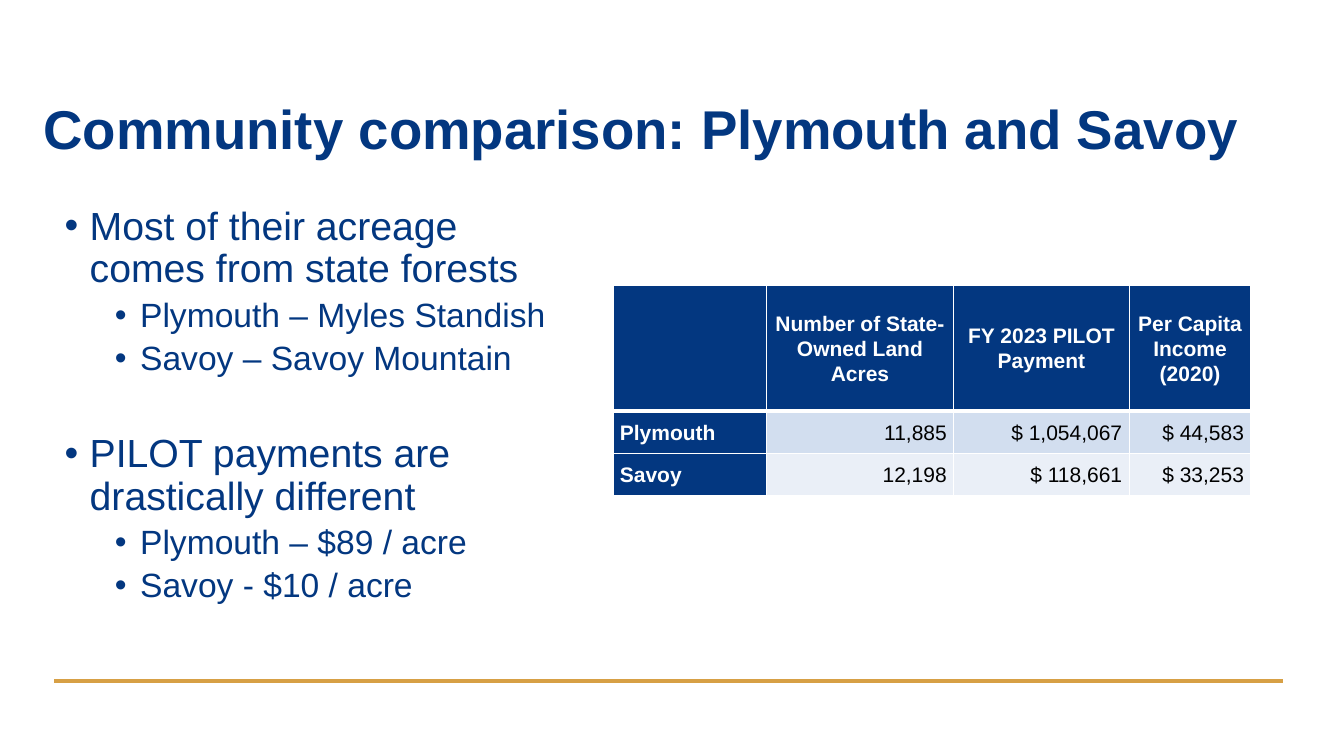
from lxml.etree import SubElement
from pptx import Presentation
from pptx.dml.color import RGBColor
from pptx.enum.shapes import MSO_CONNECTOR
from pptx.enum.text import MSO_ANCHOR, MSO_AUTO_SIZE, PP_ALIGN
from pptx.oxml.ns import qn
from pptx.util import Pt

COLORS = {
    "navy": "033780",
    "gold": "D7A045",
    "white": "FFFFFF",
    "black": "000000",
    "band_dark": "D2DEEF",
    "band_light": "EAEFF7",
}
FONT = "Arial"

BULLETS = [
    (0, "Most of their acreage comes from state forests"),
    (1, "Plymouth – Myles Standish"),
    (1, "Savoy – Savoy Mountain"),
    (0, "PILOT payments are drastically different"),
    (1, "Plymouth – $89 / acre"),
    (1, "Savoy - $10 / acre"),
]
LEVELS = [
    {"size": 28, "margin": 18, "before": 10},
    {"size": 24, "margin": 54, "before": 5},
]
GROUP_GAP = 40

ROWS = [
    ["", "Number of State-Owned Land Acres", "FY 2023 PILOT Payment",
     "Per Capita Income (2020)"],
    ["Plymouth", "11,885", "$ 1,054,067", "$ 44,583"],
    ["Savoy", "12,198", "$ 118,661", "$ 33,253"],
]
COL_WIDTHS = [109.5, 134, 125.3, 87]
ROW_HEIGHTS = [90, 30, 30]


def rgb(name):
    return RGBColor.from_string(COLORS[name])


def set_attrs(obj, values):
    for name, value in values.items():
        setattr(obj, name, value)


def place(shape, left, top, width, height):
    set_attrs(shape, {"left": Pt(left), "top": Pt(top),
                      "width": Pt(width), "height": Pt(height)})


def add_run(p, text, size, color, bold=False):
    r = p.add_run()
    r.text = text
    set_attrs(r.font, {"name": FONT, "size": Pt(size), "bold": bold})
    r.font.color.rgb = rgb(color)


def fill_title(sp):
    place(sp, 23.8, 55.4, 869.8, 77.8)
    tf = sp.text_frame
    set_attrs(tf, {"word_wrap": True, "auto_size": MSO_AUTO_SIZE.NONE,
                   "vertical_anchor": MSO_ANCHOR.MIDDLE})
    p = tf.paragraphs[0]
    set_attrs(p, {"alignment": PP_ALIGN.LEFT, "line_spacing": 0.9})
    add_run(p, "Community comparison: Plymouth and Savoy", 39, "navy", True)


def set_bullet(p, margin):
    pPr = p._p.get_or_add_pPr()
    pPr.set("marL", str(Pt(margin)))
    pPr.set("indent", str(Pt(-18)))
    SubElement(pPr, qn("a:buFont")).set("typeface", FONT)
    SubElement(pPr, qn("a:buChar")).set("char", "•")


def fill_list(sp):
    place(sp, 38.9, 144, 382.3, 342.7)
    tf = sp.text_frame
    set_attrs(tf, {"word_wrap": True, "auto_size": MSO_AUTO_SIZE.NONE,
                   "vertical_anchor": MSO_ANCHOR.TOP})
    for i, (level, text) in enumerate(BULLETS):
        p = tf.add_paragraph() if i else tf.paragraphs[0]
        fmt = LEVELS[level]
        before = GROUP_GAP if i and level == 0 else fmt["before"]
        set_attrs(p, {"level": level, "alignment": PP_ALIGN.LEFT,
                      "line_spacing": 0.9, "space_before": Pt(before),
                      "space_after": Pt(0)})
        set_bullet(p, fmt["margin"])
        add_run(p, text, fmt["size"], "navy")


def set_borders(cell, **widths):
    """Draw white borders; keys are the sides L, R, T and B in that order."""
    tcPr = cell._tc.get_or_add_tcPr()
    for side, width in widths.items():
        ln = SubElement(tcPr, qn(f"a:ln{side}"), w=str(Pt(width)))
        fill = SubElement(ln, qn("a:solidFill"))
        SubElement(fill, qn("a:srgbClr"), val=COLORS["white"])


def format_cell(cell, row, col, text):
    heading = row == 0 or col == 0
    set_borders(cell, L=1, R=1, T=3 if row == 1 else 1, B=3 if row == 0 else 1)
    cell.fill.solid()
    cell.fill.fore_color.rgb = rgb(
        "navy" if heading else "band_dark" if row % 2 else "band_light")
    set_attrs(cell, {"vertical_anchor": MSO_ANCHOR.MIDDLE,
                     "margin_left": Pt(5), "margin_right": Pt(5),
                     "margin_top": 0, "margin_bottom": 0})
    if not text:
        return
    p = cell.text_frame.paragraphs[0]
    align = (PP_ALIGN.CENTER if row == 0
             else PP_ALIGN.LEFT if col == 0 else PP_ALIGN.RIGHT)
    set_attrs(p, {"alignment": align, "line_spacing": 1.07})
    add_run(p, text, 15, "white" if heading else "black", heading)


def add_comparison_table(s):
    table = s.shapes.add_table(
        len(ROWS), len(COL_WIDTHS), Pt(437.8), Pt(203.8),
        Pt(sum(COL_WIDTHS)), Pt(sum(ROW_HEIGHTS))).table
    for column, width in zip(table.columns, COL_WIDTHS):
        column.width = Pt(width)
    for row, height in zip(table.rows, ROW_HEIGHTS):
        row.height = Pt(height)
    for r, texts in enumerate(ROWS):
        for c, text in enumerate(texts):
            format_cell(table.cell(r, c), r, c, text)


def add_rule(s, left, right, y):
    line = s.shapes.add_connector(
        MSO_CONNECTOR.STRAIGHT, Pt(left), Pt(y), Pt(right), Pt(y))
    line.line.color.rgb = rgb("gold")
    line.line.width = Pt(3)
    SubElement(line._element.spPr, qn("a:effectLst"))


def main():
    prs = Presentation()
    set_attrs(prs, {"slide_width": Pt(960), "slide_height": Pt(540)})
    s = prs.slides.add_slide(prs.slide_layouts[1])
    fill_title(s.shapes.title)
    add_comparison_table(s)
    add_rule(s, 38.9, 916.6, 486.7)
    fill_list(s.placeholders[1])
    prs.save("out.pptx")


if __name__ == "__main__":
    main()
